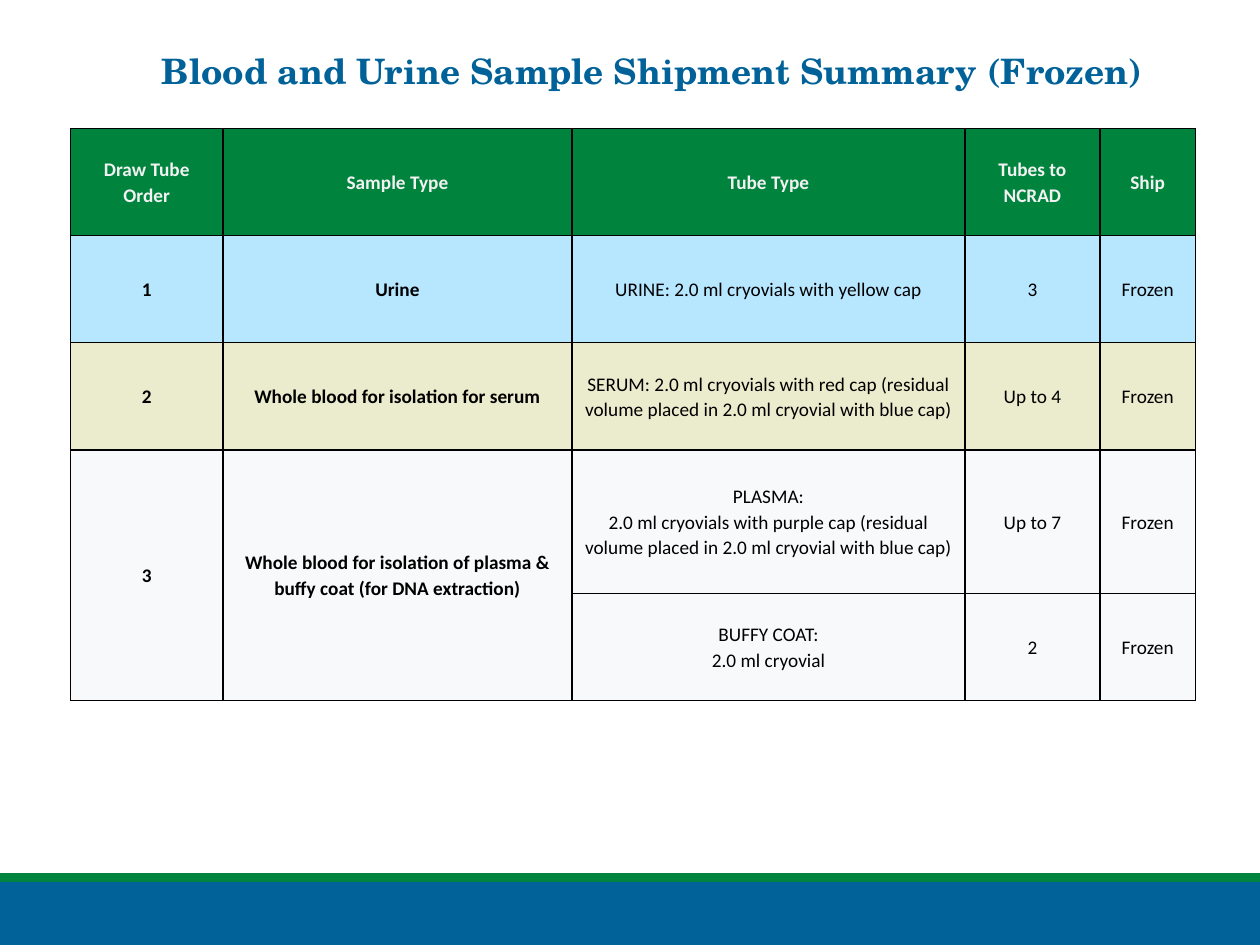
from lxml.etree import SubElement
from pptx import Presentation
from pptx.dml.color import RGBColor
from pptx.enum.shapes import MSO_SHAPE
from pptx.enum.text import MSO_ANCHOR, PP_ALIGN
from pptx.oxml.ns import qn
from pptx.util import Inches, Pt

COLORS = {
    "blue": "006298", "green": "00843D", "urine": "B7E6FF", "serum": "EBEBCD",
    "plasma": "F8F9FA", "header": "F2F2F2", "black": "000000",
}
COLS = [1.21, 2.77, 3.12, 1.07, 0.76]
ROWS = [0.85, 0.85, 0.85, 1.14, 0.85]
ROW_FILLS = ["green", "urine", "serum", "plasma", "plasma"]
BOLD_COLS = 2
CELLS = [
    ["Draw Tube Order", "Sample Type", "Tube Type", "Tubes to NCRAD", "Ship"],
    ["1", "Urine", "URINE: 2.0 ml cryovials with yellow cap", "3", "Frozen"],
    ["2", "Whole blood for isolation for serum",
     "SERUM: 2.0 ml cryovials with red cap (residual volume placed in 2.0 ml cryovial with blue cap)",
     "Up to 4", "Frozen"],
    ["3", "Whole blood for isolation of plasma & buffy coat (for DNA extraction)",
     "PLASMA:\n2.0 ml cryovials with purple cap (residual volume placed in 2.0 ml cryovial with blue cap)",
     "Up to 7", "Frozen"],
    [None, None, "BUFFY COAT:\n2.0 ml cryovial", "2", "Frozen"],
]


def rgb(name):
    """Return the named colour."""
    return RGBColor.from_string(COLORS[name])


def add_band(prs, s, top, height, color):
    """Add a full-width footer band."""
    sp = s.shapes.add_shape(MSO_SHAPE.RECTANGLE, 0, Inches(top), prs.slide_width, Inches(height))
    sp.shadow.inherit = False
    sp.fill.solid()
    sp.fill.fore_color.rgb = rgb(color)
    sp.line.fill.background()


def write(tf, text, font, size, color, bold, spacing):
    """Write centred paragraphs, one for each line of text."""
    for i, line in enumerate(text.split("\n")):
        p = tf.add_paragraph() if i else tf.paragraphs[0]
        p.alignment = PP_ALIGN.CENTER
        p.line_spacing = spacing
        p.space_before = Pt(0)
        r = p.add_run()
        r.text = line
        r.font.name = font
        r.font.size = Pt(size)
        r.font.bold = bold
        r.font.color.rgb = rgb(color)


def set_title(s, text):
    """Place and format the title placeholder."""
    sp = s.shapes.title
    sp.left, sp.top, sp.width, sp.height = map(Inches, (0.87, 0.4, 8.62, 0.72))
    tf = sp.text_frame
    tf.word_wrap = True
    tf.vertical_anchor = MSO_ANCHOR.TOP
    tf.margin_top = Inches(0.03)
    write(tf, text, "TeX Gyre Schola", 20, "blue", True, 0.9)


def style_cell(cell, fill):
    """Set margins, borders and fill of a table cell."""
    cell.vertical_anchor = MSO_ANCHOR.MIDDLE
    cell.margin_left = cell.margin_right = Inches(0.07)
    cell.margin_top = cell.margin_bottom = 0
    tcPr = cell._tc.get_or_add_tcPr()
    for side in ("a:lnL", "a:lnR", "a:lnT", "a:lnB"):
        ln = SubElement(tcPr, qn(side), w=str(Pt(1)))
        SubElement(SubElement(ln, qn("a:solidFill")), qn("a:srgbClr"), val=COLORS["black"])
    cell.fill.solid()
    cell.fill.fore_color.rgb = rgb(fill)


def add_sample_table(s):
    """Add the shipment table with its merged last rows."""
    frame = s.shapes.add_table(len(ROWS), len(COLS), Inches(0.56), Inches(1.02),
                               Inches(sum(COLS)), Inches(sum(ROWS)))
    table = frame.table
    for col, width in zip(table.columns, COLS):
        col.width = Inches(width)
    for row, height in zip(table.rows, ROWS):
        row.height = Inches(height)
    for i, texts in enumerate(CELLS):
        for j, text in enumerate(texts):
            cell = table.cell(i, j)
            style_cell(cell, ROW_FILLS[i])
            if text:
                write(cell.text_frame, text, "Calibri", 11, "black" if i else "header",
                      i == 0 or j < BOLD_COLS, 1.07)
    for j in range(BOLD_COLS):
        table.cell(3, j).merge(table.cell(4, j))


def main():
    """Build and save the slide."""
    prs = Presentation()
    prs.slide_width, prs.slide_height = Inches(10), Inches(7.5)
    s = prs.slides.add_slide(prs.slide_layouts[5])
    add_band(prs, s, 7, 0.5, "blue")
    add_band(prs, s, 6.93, 0.07, "green")
    set_title(s, "Blood and Urine Sample Shipment Summary (Frozen)")
    add_sample_table(s)
    prs.save("out.pptx")


if __name__ == "__main__":
    main()
